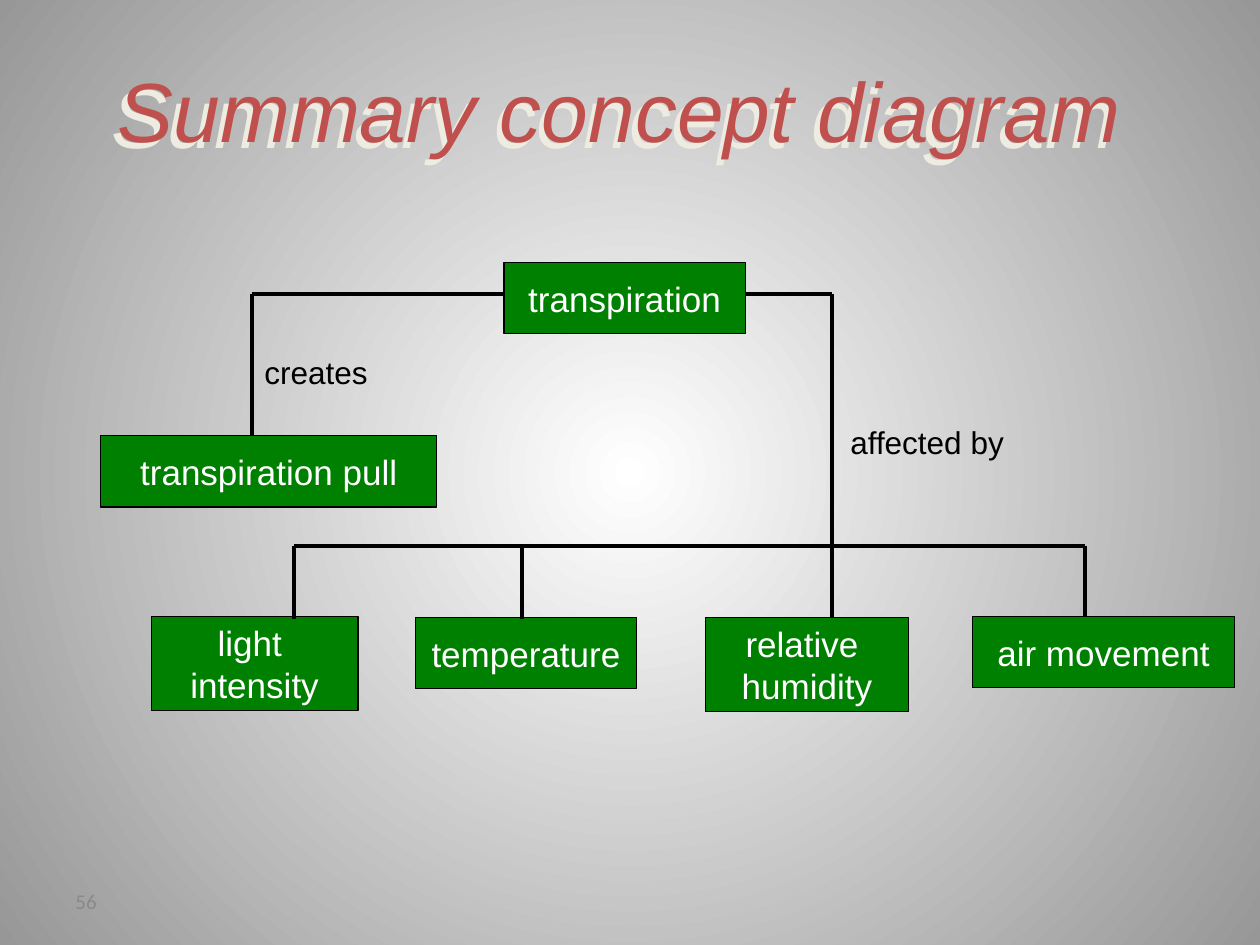
from dataclasses import dataclass
from itertools import pairwise

from lxml import etree
from pptx import Presentation
from pptx.dml.color import RGBColor
from pptx.enum.shapes import MSO_CONNECTOR, MSO_SHAPE
from pptx.enum.text import MSO_ANCHOR, PP_ALIGN
from pptx.oxml import parse_xml
from pptx.oxml.ns import qn
from pptx.util import Inches, Pt

STRAIGHT = MSO_CONNECTOR.STRAIGHT
RECTANGLE = MSO_SHAPE.RECTANGLE
TOP, MIDDLE = MSO_ANCHOR.TOP, MSO_ANCHOR.MIDDLE
LEFT, CENTER = PP_ALIGN.LEFT, PP_ALIGN.CENTER
DRAWING_NS = 'xmlns:a="http://schemas.openxmlformats.org/drawingml/2006/main"'


@dataclass(frozen=True)
class Theme:
    font: str = "Arial"
    title: str = "C0504D"
    title_shadow: str = "EEECE1"
    box: str = "008000"
    ink: str = "000000"
    light: str = "FFFFFF"
    edge: str = "979797"
    muted: str = "898989"
    title_size: int = 48
    box_size: int = 20
    label_size: int = 18
    number_size: int = 12
    outline: float = 0.75
    link: float = 2.25


def write(frame, text, *, size, color, font=None, italic=False,
          align=LEFT, anchor=TOP, wrap=True):
    """Fill a text frame with one formatted paragraph."""
    frame.word_wrap = wrap
    frame.vertical_anchor = anchor
    para = frame.paragraphs[0]
    para.text = text
    para.alignment = align
    for span in para.runs:
        span.font.size = Pt(size)
        span.font.name = font
        span.font.italic = italic
        span.font.color.rgb = RGBColor.from_string(color)


class ConceptPage:
    """A page on a grid of 120 columns by 90 rows."""

    COLUMNS, ROWS = 120, 90

    def __init__(self, deck, theme):
        self.theme = theme
        self.cell_width = deck.slide_width / self.COLUMNS
        self.cell_height = deck.slide_height / self.ROWS
        self.page = deck.slides.add_slide(deck.slide_layouts[6])

    def place(self, column, row):
        return round(column * self.cell_width), round(row * self.cell_height)

    def background(self):
        fill = self.page.background.fill
        fill.gradient()
        for stop, color in zip(fill.gradient_stops, (self.theme.light, self.theme.edge)):
            stop.color.rgb = RGBColor.from_string(color)
        # Radial gradient from the centre outwards
        linear = next(self.page.element.iter(qn("a:lin")))
        linear.getparent().replace(linear, parse_xml(
            f'<a:path {DRAWING_NS} path="circle">'
            '<a:fillToRect l="50000" t="50000" r="50000" b="50000"/></a:path>'))

    def text(self, text, column, row, columns, rows, **style):
        box = self.page.shapes.add_textbox(*self.place(column, row), *self.place(columns, rows))
        write(box.text_frame, text, **style)
        return box

    def title(self, text, *area):
        theme = self.theme
        box = self.text(text, *area, size=theme.title_size, color=theme.title,
                        font=theme.font, italic=True)
        box.element.spPr.append(parse_xml(
            f'<a:effectLst {DRAWING_NS}><a:outerShdw dist="56000" dir="8100000">'
            f'<a:srgbClr val="{theme.title_shadow}"/></a:outerShdw></a:effectLst>'))

    def label(self, text, *area):
        self.text(text, *area, size=self.theme.label_size, color=self.theme.ink,
                  font=self.theme.font)

    def concept(self, text, column, row, columns, rows=6.8):
        theme = self.theme
        box = self.page.shapes.add_shape(
            RECTANGLE, *self.place(column, row), *self.place(columns, rows))
        box.shadow.inherit = False
        box.fill.solid()
        box.fill.fore_color.rgb = RGBColor.from_string(theme.box)
        box.line.color.rgb = RGBColor.from_string(theme.ink)
        box.line.width = Pt(theme.outline)
        write(box.text_frame, text, size=theme.box_size, color=theme.light,
              font=theme.font, align=CENTER, anchor=MIDDLE, wrap=False)

    def link(self, *points):
        """Join grid points by straight lines."""
        for start, end in pairwise(points):
            line = self.page.shapes.add_connector(
                STRAIGHT, *self.place(*start), *self.place(*end))
            line.line.color.rgb = RGBColor.from_string(self.theme.ink)
            line.line.width = Pt(self.theme.link)
            etree.SubElement(line.element.spPr, qn("a:effectLst"))


def main():
    deck = Presentation()
    deck.slide_width, deck.slide_height = Inches(10), Inches(7.5)
    theme = Theme()
    page = ConceptPage(deck, theme)
    page.background()
    page.title("Summary concept diagram", 10, 5, 105.2, 10.8)

    # Main concept and what it creates
    top_row, branch_row, factor_row = 28, 52, 58.8
    pull_column, affected_column = 24, 79.2
    page.label("creates", pull_column, 33, 16, 4.8)
    page.link((pull_column, 42), (pull_column, top_row), (48, top_row))
    page.label("affected by", 79.8, 39.7, 21, 4.8)
    page.concept("transpiration pull", 9.6, 41.5, 32)
    page.concept("transpiration", 48, 25, 23)

    # Factors whose links end on top of the box
    page.concept("temperature", 39.6, factor_row, 21)
    page.concept("light \nintensity", 14.4, factor_row - 0.1, 19.7, 9)

    # Trunk, branch and one drop for each factor
    page.link((71, top_row), (affected_column, top_row), (affected_column, 52.5))
    drops = (28, 49.7, affected_column, 103.3)
    page.link((drops[0], branch_row), (drops[-1], branch_row))
    for column in drops:
        page.link((column, branch_row), (column, 59))

    # Factors that cover the ends of their links
    page.concept("air movement", 92.6, factor_row - 0.1, 25)
    page.concept("relative \nhumidity", 67.2, factor_row, 19.3, 9)

    # Page number
    page.text("56", 6, 83.4, 28, 4.8, size=theme.number_size, color=theme.muted,
              anchor=MIDDLE)
    deck.save("out.pptx")


if __name__ == "__main__":
    main()
